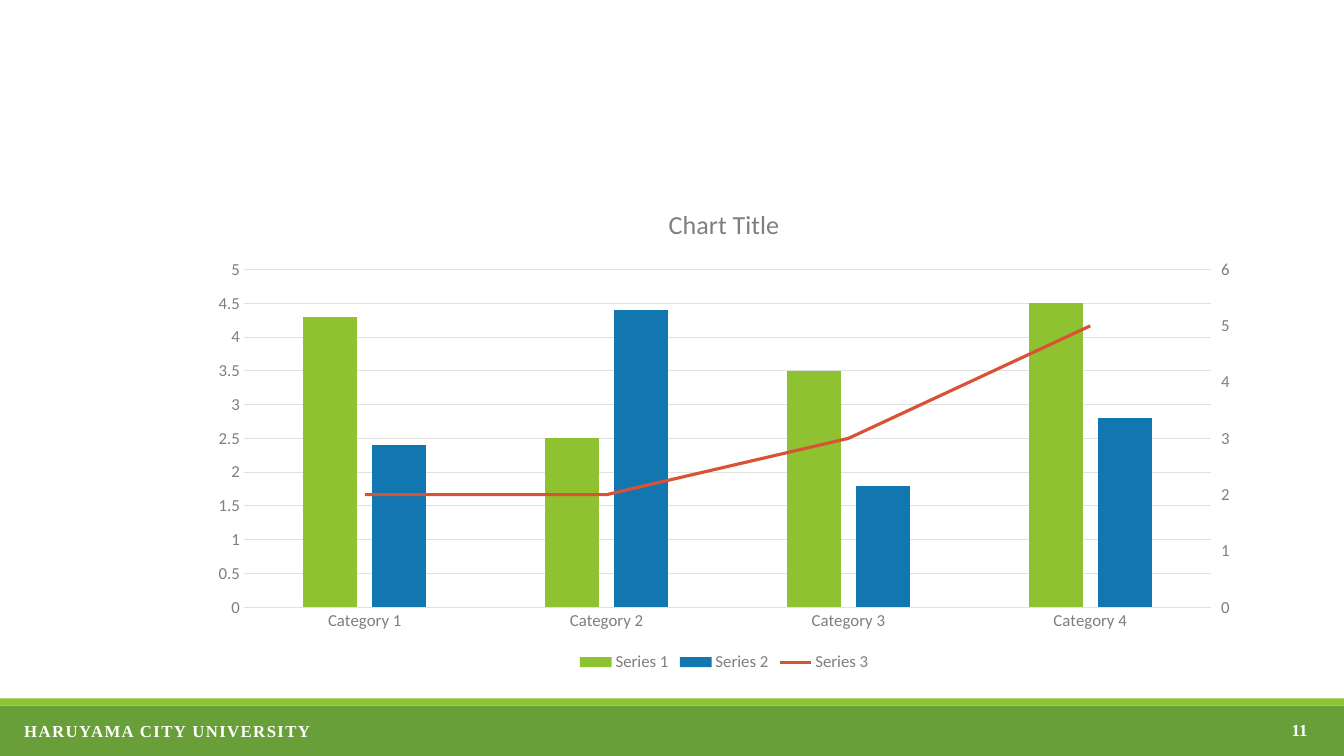
from pptx import Presentation
from pptx.chart.axis import ValueAxis
from pptx.chart.data import CategoryChartData
from pptx.dml.color import RGBColor
from pptx.enum.chart import XL_CHART_TYPE, XL_LEGEND_POSITION, XL_MARKER_STYLE, XL_TICK_MARK
from pptx.enum.shapes import MSO_SHAPE
from pptx.enum.text import MSO_ANCHOR, PP_ALIGN
from pptx.oxml import parse_xml
from pptx.util import Cm, Pt

GREY, GRID = "7E7E7E", "E1E1E1"
LIME, BLUE, RED = "8FC231", "1276B1", "DA5234"


def color(hex_value):
    return RGBColor.from_string(hex_value)


def style_font(font, size, hex_value, **values):
    """Set size and colour, then any other font attributes."""
    font.color.rgb = color(hex_value)
    for name, value in {"size": Pt(size), "name": "Calibri", **values}.items():
        setattr(font, name, value)


prs = Presentation()
prs.slide_width, prs.slide_height = Cm(33.87), Cm(19.05)
slide = prs.slides.add_slide(prs.slide_layouts[6])

# Footer bands
for top, height, fill in ((17.78, 1.27, "689F38"), (17.6, 0.18, LIME)):
    band = slide.shapes.add_shape(
        MSO_SHAPE.RECTANGLE, 0, Cm(top), prs.slide_width, Cm(height))
    band.shadow.inherit = False
    band.fill.solid()
    band.fill.fore_color.rgb = color(fill)
    band.line.fill.background()

# Footer text
footer_texts = (
    ("HARUYAMA CITY UNIVERSITY", (0.36, 18.03, 31.7, 0.77), PP_ALIGN.LEFT, MSO_ANCHOR.TOP, 100),
    ("11", (25.58, 17.88, 7.62, 1.02), PP_ALIGN.RIGHT, MSO_ANCHOR.MIDDLE, 0),
)
for text, place, alignment, anchor, spacing in footer_texts:
    frame = slide.shapes.add_textbox(*map(Cm, place)).text_frame
    frame.word_wrap = True
    frame.vertical_anchor = anchor
    paragraph = frame.paragraphs[0]
    paragraph.alignment = alignment
    run = paragraph.add_run()
    run.text = text
    style_font(run.font, 12, "FFFFFF", name="Times New Roman", bold=True)
    run.font._element.set("spc", str(spacing))

# Column chart with all three series
data = CategoryChartData()
data.categories = [f"Category {number}" for number in range(1, 5)]
data.add_series("Series 1", (4.3, 2.5, 3.5, 4.5))
data.add_series("Series 2", (2.4, 4.4, 1.8, 2.8))
data.add_series("Series 3", (2, 2, 3, 5))
chart = slide.shapes.add_chart(
    XL_CHART_TYPE.COLUMN_CLUSTERED, Cm(4.98), Cm(4.7), Cm(26.54), Cm(12.34), data).chart
style_font(chart.font, 10, "383838")

chart.has_title = True
title = chart.chart_title.text_frame
title.text = "Chart Title"
style_font(title.paragraphs[0].runs[0].font, 18.6, GREY, bold=False)
chart.chart_title.include_in_layout = False

chart.has_legend = True
chart.legend.position = XL_LEGEND_POSITION.BOTTOM
chart.legend.include_in_layout = False
style_font(chart.legend.font, 12, GREY)

# Series 3 becomes a line on a second axis
C_NS = 'xmlns:c="http://schemas.openxmlformats.org/drawingml/2006/chart"'
columns = chart.plots[0]
column_xml = columns._element
line_xml = parse_xml(
    f'<c:lineChart {C_NS}><c:grouping val="standard"/><c:varyColors val="0"/>'
    '<c:marker val="1"/><c:axId val="111"/><c:axId val="222"/></c:lineChart>')
trend_xml = columns.series[2]._element
for invert in trend_xml.xpath("c:invertIfNegative"):
    trend_xml.remove(invert)
line_xml.insert(2, trend_xml)
column_xml.addnext(line_xml)

right_axis_xml = parse_xml(
    f'<c:valAx {C_NS}><c:axId val="222"/><c:scaling/><c:delete val="0"/>'
    '<c:axPos val="r"/><c:numFmt formatCode="General" sourceLinked="0"/>'
    '<c:majorTickMark val="out"/><c:minorTickMark val="none"/>'
    '<c:tickLblPos val="nextTo"/><c:crossAx val="111"/><c:crosses val="max"/></c:valAx>')
hidden_axis_xml = parse_xml(
    f'<c:catAx {C_NS}><c:axId val="111"/><c:scaling/><c:delete val="1"/>'
    '<c:axPos val="b"/><c:majorTickMark val="none"/><c:minorTickMark val="none"/>'
    '<c:tickLblPos val="nextTo"/><c:crossAx val="222"/><c:crosses val="autoZero"/></c:catAx>')
left_axis, right_axis = chart.value_axis, ValueAxis(right_axis_xml)
left_axis._element.addnext(right_axis_xml)
right_axis_xml.addnext(hidden_axis_xml)

# Series formats
columns.vary_by_categories = False
columns.gap_width, columns.overlap = 219, -27
for series, fill in zip(columns.series, (LIME, BLUE)):
    series.format.fill.solid()
    series.format.fill.fore_color.rgb = color(fill)
trend = chart.plots[1].series[0]
trend.smooth = False
trend.marker.style = XL_MARKER_STYLE.NONE
trend.format.line.color.rgb = color(RED)
trend.format.line.width = Pt(2.25)

# Axis formats
category_axis = chart.category_axis
axis_formats = (
    (category_axis, {"major_tick_mark": XL_TICK_MARK.NONE}),
    (left_axis, {"major_tick_mark": XL_TICK_MARK.NONE, "minimum_scale": 0,
                 "maximum_scale": 5, "major_unit": 0.5}),
    (right_axis, {"major_tick_mark": XL_TICK_MARK.OUTSIDE, "minimum_scale": 0,
                  "maximum_scale": 6, "major_unit": 1}),
)
for axis, values in axis_formats:
    for name, value in values.items():
        setattr(axis, name, value)
    style_font(axis.tick_labels.font, 12, GREY)
for line in (category_axis.format.line, left_axis.major_gridlines.format.line):
    line.color.rgb = color(GRID)
    line.width = Pt(0.75)
for axis in (left_axis, right_axis):
    axis.format.line.fill.background()

prs.save("out.pptx")
